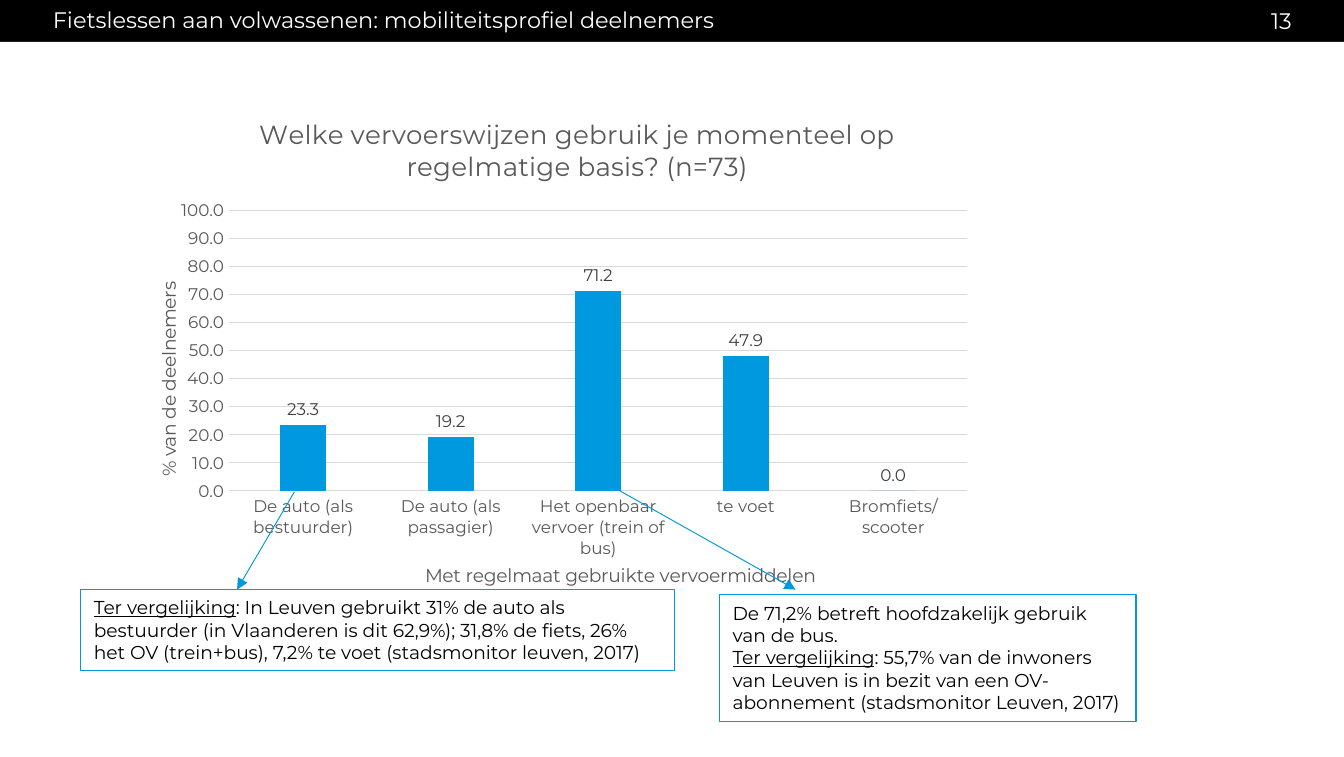
"""Build the slide on the mobility profile of adult cycling-lesson participants."""
from lxml import etree
from pptx import Presentation
from pptx.chart.data import CategoryChartData
from pptx.dml.color import RGBColor
from pptx.enum.chart import XL_CHART_TYPE as ChartType, XL_LABEL_POSITION as LabelPosition, XL_TICK_MARK as TickMark
from pptx.enum.shapes import MSO_CONNECTOR as Connector, MSO_SHAPE as Shape
from pptx.enum.text import MSO_ANCHOR as Anchor, PP_ALIGN as Align
from pptx.oxml import parse_xml
from pptx.oxml.ns import nsdecls, qn
from pptx.util import Pt

FONT = "Montserrat"
BLUE, GREY, LIGHT = "0099DF", "595959", "D9D9D9"
WIDTH, HEIGHT, HEADER = 720, 405.36, 22.5


def color(value):
    return RGBColor.from_string(value)


def write(frame, text, size=10, fill="000000", align=Align.LEFT, spacing=None, underlined=None):
    for index, line in enumerate(text.split("\n")):
        paragraph = frame.add_paragraph() if index else frame.paragraphs[0]
        paragraph.alignment = align
        if spacing:
            paragraph.line_spacing = spacing
        marked = underlined if underlined and line.startswith(underlined) else ""
        for part, underline in ((marked, True), (line[len(marked):], False)):
            if part:
                run = paragraph.add_run()
                run.text = part
                run.font.name, run.font.size, run.font.bold = FONT, Pt(size), False
                run.font.underline = underline
                run.font.color.rgb = color(fill)


presentation = Presentation()
presentation.slide_width, presentation.slide_height = Pt(WIDTH), Pt(HEIGHT)
slide = presentation.slides.add_slide(presentation.slide_layouts[6])
slide.background.fill.solid()
slide.background.fill.fore_color.rgb = color("000000")

page = slide.shapes.add_shape(Shape.RECTANGLE, Pt(0), Pt(HEADER), Pt(WIDTH), Pt(HEIGHT - HEADER))
page.shadow.inherit = False
page.fill.solid()
page.fill.fore_color.rgb = color("FFFFFF")
page.line.fill.background()

for text, left, width, align, spacing in (
    ("Fietslessen aan volwassenen: mobiliteitsprofiel deelnemers", 28.35, 620.5, Align.LEFT, 0.9),
    ("13", 525, 167, Align.RIGHT, None),
):
    frame = slide.shapes.add_textbox(Pt(left), Pt(0), Pt(width), Pt(HEADER)).text_frame
    frame.word_wrap = True
    frame.vertical_anchor = Anchor.MIDDLE
    frame.margin_left = frame.margin_right = frame.margin_top = frame.margin_bottom = 0
    write(frame, text, size=12, fill="FFFFFF", align=align, spacing=spacing)

for text, left, top, width, height in (
    ("De 71,2% betreft hoofdzakelijk gebruik van de bus.\n"
     "Ter vergelijking: 55,7% van de inwoners van Leuven is in bezit van een "
     "OV-abonnement (stadsmonitor Leuven, 2017)", 385.4, 318.5, 223.2, 67.8),
    ("Ter vergelijking: In Leuven gebruikt 31% de auto als bestuurder (in Vlaanderen is dit 62,9%); "
     "31,8% de fiets, 26% het OV (trein+bus), 7,2% te voet (stadsmonitor leuven, 2017)",
     43.2, 315.7, 318.2, 43.4),
):
    note = slide.shapes.add_shape(Shape.RECTANGLE, Pt(left), Pt(top), Pt(width), Pt(height))
    note.shadow.inherit = False
    note.fill.background()
    note.line.color.rgb = color(BLUE)
    note.line.width = Pt(0.75)
    note.text_frame.word_wrap = True
    note.text_frame.vertical_anchor = Anchor.TOP
    write(note.text_frame, text, underlined="Ter vergelijking")

data = CategoryChartData(number_format="0.0")
data.categories = ["De auto (als bestuurder)", "De auto (als passagier)",
                   "Het openbaar vervoer (trein of bus)", "te voet", "Bromfiets/ scooter"]
data.add_series("Series 1", [23.3, 19.2, 71.2, 47.9, 0])
chart = slide.shapes.add_chart(ChartType.COLUMN_CLUSTERED, Pt(81.4), Pt(50.5), Pt(455.8), Pt(267.8), data).chart
chart.has_legend = False
chart.font.name, chart.font.size, chart.font.color.rgb = FONT, Pt(10), color("000000")
chart.has_title = True
write(chart.chart_title.text_frame, "Welke vervoerswijzen gebruik je momenteel op regelmatige basis? (n=73)",
      size=14, fill=GREY, align=Align.CENTER)
chart.chart_title.include_in_layout = False

for axis, title in ((chart.category_axis, "Met regelmaat gebruikte vervoermiddelen"),
                    (chart.value_axis, "% van de deelnemers")):
    axis.has_title = True
    write(axis.axis_title.text_frame, title, fill=GREY, align=Align.CENTER)
    axis.major_tick_mark = axis.minor_tick_mark = TickMark.NONE
    font = axis.tick_labels.font
    font.name, font.size, font.color.rgb = FONT, Pt(9), color(GREY)

value_axis = chart.value_axis
value_axis.minimum_scale, value_axis.maximum_scale, value_axis.major_unit = 0, 100, 10
value_axis.tick_labels.number_format = "0.0"
value_axis.tick_labels.number_format_is_linked = False
value_axis.format.line.fill.background()
value_axis.has_major_gridlines = True
for line in (chart.category_axis.format.line, value_axis.major_gridlines.format.line):
    line.color.rgb = color(LIGHT)
    line.width = Pt(0.75)

plot = chart.plots[0]
plot.gap_width, plot.overlap, plot.vary_by_categories = 219, -27, False
series = plot.series[0]
series.format.fill.solid()
series.format.fill.fore_color.rgb = color(BLUE)
labels = series.data_labels
labels.show_value = True
labels.position = LabelPosition.OUTSIDE_END
labels.number_format, labels.number_format_is_linked = "0.0", False
labels.font.name, labels.font.size, labels.font.color.rgb = FONT, Pt(9), color("404040")

plot_area = chart.element.find(".//" + qn("c:plotArea"))
category_title = plot_area.find(qn("c:catAx")).find(qn("c:title"))
edges = {"xMode": "edge", "yMode": "edge"}
for parent, position, settings in (
    (plot_area, 0, {"layoutTarget": "inner", **edges, "x": 0.091, "y": 0.232, "w": 0.867, "h": 0.561}),
    (category_title, 1, {**edges, "x": 0.317, "y": 0.928}),
):
    for layout in parent.findall(qn("c:layout")):
        parent.remove(layout)
    items = "".join(f'<c:{name} val="{value}"/>' for name, value in settings.items())
    parent.insert(position, parse_xml(
        f'<c:layout {nsdecls("c")}><c:manualLayout>{items}</c:manualLayout></c:layout>'))

for start_x, start_y, end_x, end_y in ((157.7, 263.4, 127, 315.7), (331.5, 262.5, 426.2, 315.7)):
    arrow = slide.shapes.add_connector(Connector.STRAIGHT, Pt(start_x), Pt(start_y), Pt(end_x), Pt(end_y))
    arrow.line.color.rgb = color(BLUE)
    arrow.line.width = Pt(0.5)
    etree.SubElement(arrow.line._get_or_add_ln(), qn("a:tailEnd"), type="triangle")
    etree.SubElement(arrow._element.spPr, qn("a:effectLst"))

presentation.save("out.pptx")
